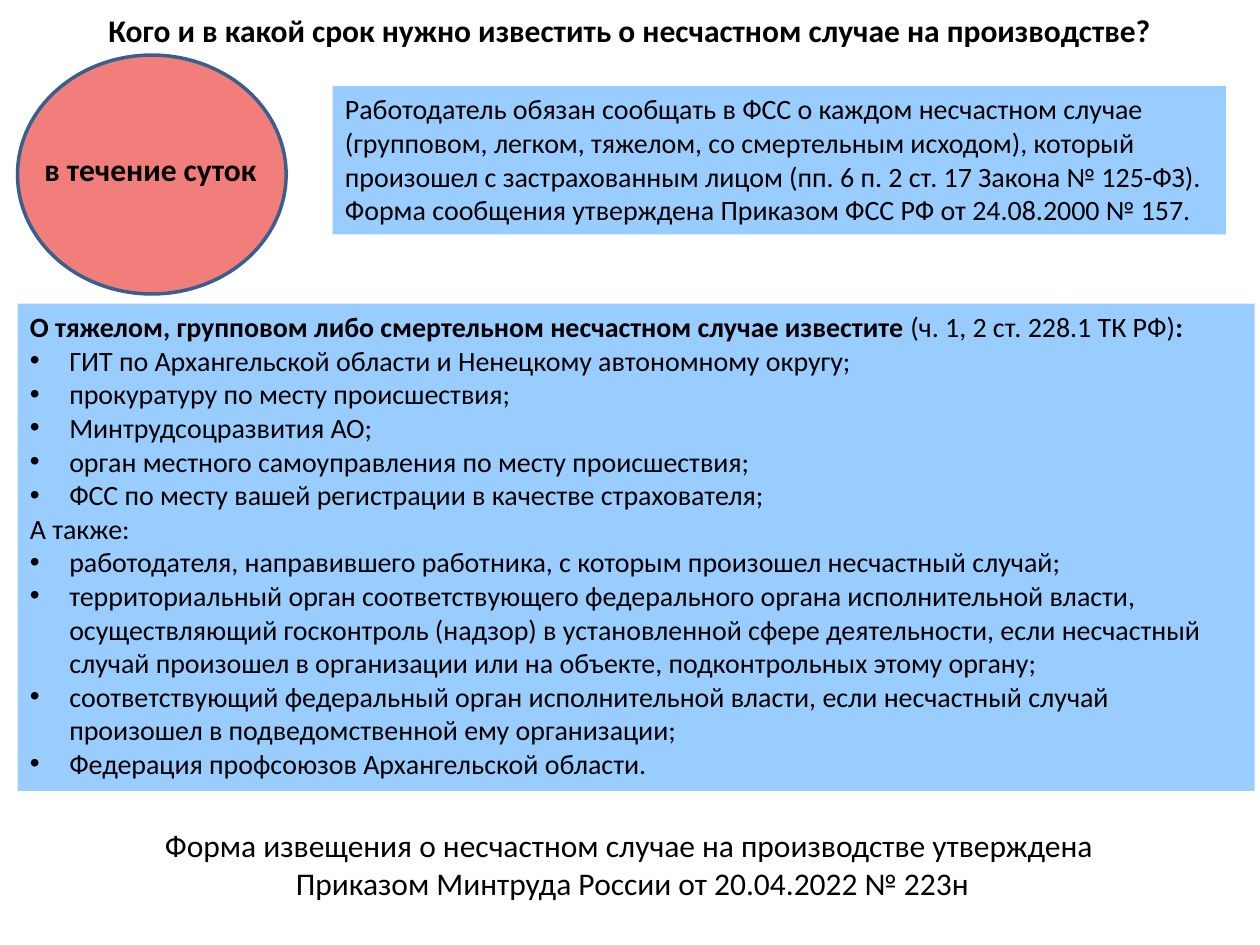
from dataclasses import dataclass

from lxml import etree
from pptx import Presentation
from pptx.dml.color import RGBColor
from pptx.enum.shapes import MSO_SHAPE
from pptx.enum.text import MSO_ANCHOR, MSO_AUTO_SIZE, PP_ALIGN
from pptx.oxml.ns import qn
from pptx.util import Pt

OVAL = MSO_SHAPE.OVAL
TOP = MSO_ANCHOR.TOP
GROW = MSO_AUTO_SIZE.SHAPE_TO_FIT_TEXT
LEFT, CENTER = PP_ALIGN.LEFT, PP_ALIGN.CENTER
FONT = "Calibri"
INDENT = Pt(22.5)
COLORS = {"text": "000000", "panel": "99CCFF", "oval": "F17E7B", "edge": "3A5F8C"}


@dataclass
class Line:
    runs: list[tuple[str, bool]]  # wording and whether it is bold
    bullet: bool = False


@dataclass
class Block:
    box: tuple[float, float, float, float]
    lines: list[Line]
    size: float
    align: PP_ALIGN = LEFT
    fill: str | None = None


def rgb(name: str) -> RGBColor:
    return RGBColor.from_string(COLORS[name])


def plain(text: str) -> Line:
    return Line([(text, False)])


def bold(text: str) -> Line:
    return Line([(text, True)])


def item(text: str) -> Line:
    return Line([(text, False)], True)


def add_bullet(para) -> None:
    props = para._p.get_or_add_pPr()
    props.set("marL", str(INDENT))
    props.set("indent", str(-INDENT))
    etree.SubElement(props, qn("a:buFont"), typeface="Arial")
    etree.SubElement(props, qn("a:buChar"), char="•")


def add_block(slide, block: Block) -> None:
    shape = slide.shapes.add_textbox(*map(Pt, block.box))
    if block.fill:
        shape.fill.solid()
        shape.fill.fore_color.rgb = rgb(block.fill)
    frame = shape.text_frame
    frame.word_wrap = True
    frame.auto_size = GROW
    frame.vertical_anchor = TOP
    for i, line in enumerate(block.lines):
        para = frame.add_paragraph() if i else frame.paragraphs[0]
        para.alignment = block.align
        if line.bullet:
            add_bullet(para)
        for text, strong in line.runs:
            run = para.add_run()
            run.text = text
            font = run.font
            font.name, font.size, font.bold = FONT, Pt(block.size), strong
            font.color.rgb = rgb("text")


def add_oval(slide, box: tuple[float, float, float, float]) -> None:
    oval = slide.shapes.add_shape(OVAL, *map(Pt, box))
    oval.shadow.inherit = False
    oval.fill.solid()
    oval.fill.fore_color.rgb = rgb("oval")
    oval.line.color.rgb = rgb("edge")
    oval.line.width = Pt(2)


TITLE = Block(
    (3, 3, 714, 29),
    [bold("Кого и в какой срок нужно известить о несчастном случае на производстве?")],
    18, CENTER)

DUTY = Block(
    (190, 49, 510.5, 85),
    [plain("Работодатель обязан сообщать в ФСС о каждом несчастном случае "
           "(групповом, легком, тяжелом, со смертельным исходом), который "
           "произошел с застрахованным лицом (пп. 6 п. 2 ст. 17 Закона № 125-ФЗ)."),
     plain("Форма сообщения утверждена Приказом ФСС РФ от 24.08.2000 № 157.")],
    16, fill="panel")

TERM = Block((16.5, 82, 139, 29), [bold("в течение суток")], 18, CENTER)

NOTIFY = Block(
    (10, 173.5, 707, 278.5),
    [Line([("О тяжелом, групповом либо смертельном несчастном случае известите", True),
           (" (ч. 1, 2 ст. 228.1 ТК РФ)", False), (":", True)]),
     item("ГИТ по Архангельской области и Ненецкому автономному округу;"),
     item("прокуратуру по месту происшествия;"),
     item("Минтрудсоцразвития АО;"),
     item("орган местного самоуправления по месту происшествия;"),
     item("ФСС по месту вашей регистрации в качестве страхователя;"),
     plain("А также:"),
     item("работодателя, направившего работника, с которым произошел несчастный случай;"),
     item("территориальный орган соответствующего федерального органа исполнительной "
          "власти, осуществляющий госконтроль (надзор) в установленной сфере "
          "деятельности, если несчастный случай произошел в организации или на "
          "объекте, подконтрольных этому органу;"),
     item("соответствующий федеральный орган исполнительной власти, если несчастный "
          "случай произошел в подведомственной ему организации;"),
     item("Федерация профсоюзов Архангельской области.")],
    16, fill="panel")

FORM = Block(
    (3, 468.5, 717, 51),
    [plain("Форма извещения о несчастном случае на производстве утверждена "),
     plain("Приказом Минтруда России от 20.04.2022 № 223н")],
    18, CENTER)


def main() -> None:
    deck = Presentation()
    deck.slide_width, deck.slide_height = Pt(720), Pt(540)
    slide = deck.slides.add_slide(deck.slide_layouts[6])

    # Deadline oval, under its caption
    add_oval(slide, (10, 31.5, 153.5, 136.5))

    # Text, from back to front
    for block in (TITLE, DUTY, TERM, NOTIFY, FORM):
        add_block(slide, block)

    deck.save("out.pptx")


if __name__ == "__main__":
    main()
